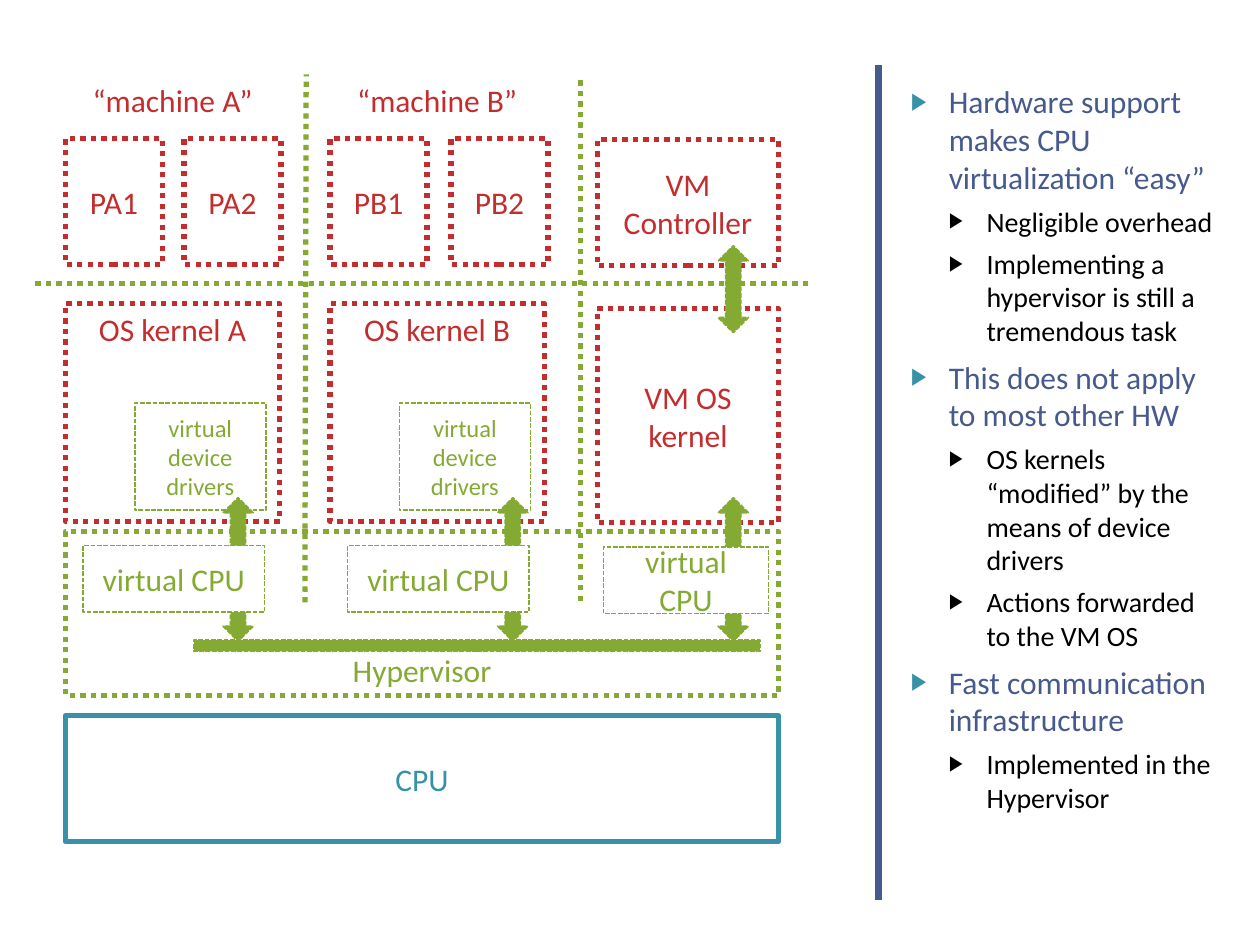
from dataclasses import dataclass
from typing import Optional

from lxml.etree import SubElement
from pptx import Presentation
from pptx.dml.color import RGBColor
from pptx.enum.dml import MSO_LINE
from pptx.enum.shapes import MSO_CONNECTOR, MSO_SHAPE
from pptx.enum.text import MSO_ANCHOR, PP_ALIGN
from pptx.oxml.ns import qn
from pptx.util import Inches, Pt


@dataclass(frozen=True)
class Theme:
    font: str = "Calibri"
    navy: str = "475A8D"
    red: str = "C32D2E"
    green: str = "84AA33"
    teal: str = "3891A7"
    black: str = "000000"
    white: str = "FFFFFF"
    large: int = 18
    medium: int = 16
    small: int = 14
    thick: float = 3
    thin: float = 0.9


THEME = Theme()


@dataclass(frozen=True)
class Box:
    left: float
    top: float
    width: float
    height: float
    text: str = ""
    color: str = THEME.red
    size: int = THEME.large
    anchor: MSO_ANCHOR = MSO_ANCHOR.MIDDLE
    fill: Optional[str] = None
    weight: float = THEME.thick
    dash: Optional[MSO_LINE] = MSO_LINE.ROUND_DOT
    kind: MSO_SHAPE = MSO_SHAPE.RECTANGLE


@dataclass(frozen=True)
class Line:
    start: tuple
    end: tuple
    color: str = THEME.green
    weight: float = THEME.thick
    dash: Optional[MSO_LINE] = MSO_LINE.ROUND_DOT


@dataclass(frozen=True)
class Machine:
    name: str
    left: float
    second_process: float
    arrow: float


@dataclass(frozen=True)
class Level:
    indent: float
    size: int
    color: str
    bullet: str
    before: int


LEVELS = [
    Level(0.3, THEME.large, THEME.navy, THEME.teal, 6),
    Level(0.6, THEME.medium, THEME.black, THEME.black, 5),
]
POINTS = [
    (0, "Hardware support makes CPU virtualization “easy”"),
    (1, "Negligible overhead"),
    (1, "Implementing a hypervisor is still a tremendous task"),
    (0, "This does not apply to most other HW"),
    (1, "OS kernels “modified” by the means of device drivers"),
    (1, "Actions forwarded to the VM OS"),
    (0, "Fast communication infrastructure"),
    (1, "Implemented in the Hypervisor"),
]
MACHINES = [Machine("A", 0.52, 1.46, 1.77), Machine("B", 2.62, 3.58, 3.95)]
CONTROLLER_ARROW = 5.7
GREEN_THIN = {"color": THEME.green, "weight": THEME.thin, "dash": MSO_LINE.SQUARE_DOT}


def style_line(line, color: str, weight: float, dash: Optional[MSO_LINE]) -> None:
    line.color.rgb = RGBColor.from_string(color)
    formats = {"width": Pt(weight), "dash_style": dash}
    for name, value in formats.items():
        setattr(line, name, value)


def style_font(font, color: str, size: int) -> None:
    for name, value in {"name": THEME.font, "size": Pt(size)}.items():
        setattr(font, name, value)
    font.color.rgb = RGBColor.from_string(color)


def write_text(shape, text: str, color: str, size: int, anchor: MSO_ANCHOR) -> None:
    frame = shape.text_frame
    for name, value in {"word_wrap": True, "vertical_anchor": anchor}.items():
        setattr(frame, name, value)
    para = frame.paragraphs[0]
    para.text = text
    para.alignment = PP_ALIGN.CENTER
    for span in para.runs:
        style_font(span.font, color, size)


def draw_box(page, box: Box) -> None:
    place = map(Inches, (box.left, box.top, box.width, box.height))
    shape = page.shapes.add_shape(box.kind, *place)
    shape.shadow.inherit = False
    if box.fill:
        shape.fill.solid()
        shape.fill.fore_color.rgb = RGBColor.from_string(box.fill)
    else:
        shape.fill.background()
    style_line(shape.line, box.color, box.weight, box.dash)
    if box.text:
        write_text(shape, box.text, box.color, box.size, box.anchor)


def draw_line(page, line: Line) -> None:
    ends = map(Inches, line.start + line.end)
    connector = page.shapes.add_connector(MSO_CONNECTOR.STRAIGHT, *ends)
    style_line(connector.line, line.color, line.weight, line.dash)
    SubElement(connector._element.spPr, qn("a:effectLst"))


def draw_label(page, left: float, top: float, text: str) -> None:
    label = page.shapes.add_textbox(*map(Inches, (left, top, 1.7, 0.4)))
    write_text(label, text, THEME.red, THEME.large, MSO_ANCHOR.MIDDLE)


def draw_arrow(page, left: float, top: float, height: float) -> None:
    draw_box(page, Box(left, top, 0.24, height, fill=THEME.green,
                       kind=MSO_SHAPE.UP_DOWN_ARROW, **GREEN_THIN))


def draw_virtual(page, left: float, top: float, width: float, height: float,
                 text: str, size: int) -> None:
    draw_box(page, Box(left, top, width, height, text, size=size,
                       fill=THEME.white, **GREEN_THIN))


def add_bullet(para, level: Level) -> None:
    properties = para._p.get_or_add_pPr()
    properties.set("marL", str(Inches(level.indent)))
    properties.set("indent", str(Inches(-0.3)))
    color = SubElement(properties, qn("a:buClr"))
    SubElement(color, qn("a:srgbClr"), val=level.bullet)
    SubElement(properties, qn("a:buSzPct"), val="76000")
    SubElement(properties, qn("a:buChar"), char="▶")


def fill_body(body) -> None:
    place = {"left": 7.13, "top": 0.6, "width": 2.68, "height": 6.46}
    for name, value in place.items():
        setattr(body, name, Inches(value))
    frame = body.text_frame
    for index, (depth, text) in enumerate(POINTS):
        para = frame.add_paragraph() if index else frame.paragraphs[0]
        level = LEVELS[depth]
        formats = {"text": text, "level": depth, "space_before": Pt(level.before)}
        for name, value in formats.items():
            setattr(para, name, value)
        add_bullet(para, level)
        style_font(para.runs[0].font, level.color, level.size)


def main() -> None:
    deck = Presentation()
    deck.slide_width, deck.slide_height = Inches(10), Inches(7.5)
    page = deck.slides.add_slide(deck.slide_layouts[1])
    title = page.shapes.title._element
    title.getparent().remove(title)

    # Notes column and its rule
    draw_line(page, Line((6.97, 0.52), (6.97, 7.14), THEME.navy, 4, None))
    fill_body(page.placeholders[1])

    # Hypervisor and hardware
    draw_box(page, Box(0.52, 4.22, 5.66, 1.3, "Hypervisor", THEME.green,
                       anchor=MSO_ANCHOR.BOTTOM, fill=THEME.white))
    draw_box(page, Box(0.52, 5.68, 5.66, 1, "CPU", THEME.teal, dash=None))

    # Separators between machines and between user and kernel space
    for start, end in [((0.28, 2.25), (6.42, 2.25)), ((2.42, 4.78), (2.43, 0.59)),
                       ((4.61, 4.77), (4.61, 0.6))]:
        draw_line(page, Line(start, end))

    # Guest machines
    for machine in MACHINES:
        left, name = machine.left, machine.name
        draw_label(page, left, 0.59, f"“machine {name}”")
        for number, process in enumerate((left, machine.second_process), 1):
            draw_box(page, Box(process, 1.1, 0.77, 1, f"P{name}{number}"))
        draw_box(page, Box(left, 2.41, 1.7, 1.73, f"OS kernel {name}",
                           anchor=MSO_ANCHOR.TOP))
        draw_virtual(page, left + 0.55, 3.2, 1.04, 0.85,
                     "virtual device drivers", THEME.small)
        draw_arrow(page, machine.arrow, 3.95, 1.14)
        draw_virtual(page, left + 0.14, 4.33, 1.44, 0.53, "virtual CPU", THEME.large)

    # Controlling machine
    draw_box(page, Box(4.74, 1.11, 1.44, 1, "VM\vController"))
    draw_box(page, Box(4.74, 2.45, 1.44, 1.7, "VM OS kernel"))
    draw_arrow(page, CONTROLLER_ARROW, 3.95, 1.14)
    draw_virtual(page, 4.79, 4.34, 1.31, 0.53, "virtual CPU", THEME.large)
    draw_arrow(page, CONTROLLER_ARROW, 1.95, 0.69)

    # Communication bus
    draw_box(page, Box(1.54, 5.08, 4.49, 0.09, fill=THEME.green, **GREEN_THIN))
    deck.save("out.pptx")


if __name__ == "__main__":
    main()
